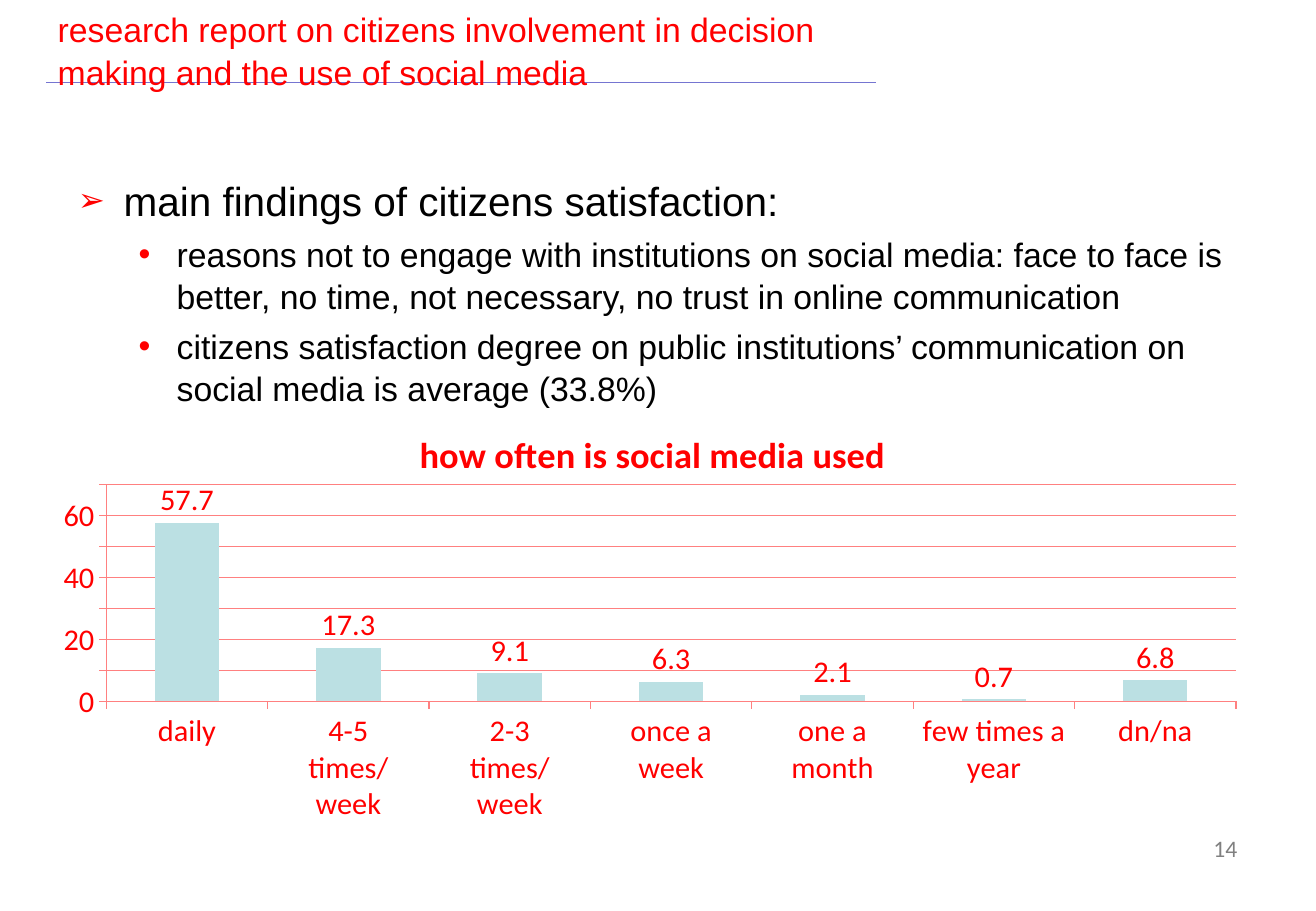
from dataclasses import dataclass

from lxml import etree
from pptx import Presentation
from pptx.chart.data import CategoryChartData
from pptx.dml.color import RGBColor
from pptx.enum.chart import XL_CHART_TYPE, XL_LABEL_POSITION, XL_TICK_MARK
from pptx.enum.shapes import MSO_CONNECTOR
from pptx.enum.text import MSO_ANCHOR, MSO_AUTO_SIZE, PP_ALIGN
from pptx.oxml import parse_xml
from pptx.oxml.ns import nsdecls, qn
from pptx.util import Pt

COLUMNS = XL_CHART_TYPE.COLUMN_CLUSTERED
ABOVE_BAR = XL_LABEL_POSITION.OUTSIDE_END
TICK_OUT = XL_TICK_MARK.OUTSIDE
STRAIGHT = MSO_CONNECTOR.STRAIGHT
MIDDLE, TOP = MSO_ANCHOR.MIDDLE, MSO_ANCHOR.TOP
NO_FIT = MSO_AUTO_SIZE.NONE
LEFT, RIGHT = PP_ALIGN.LEFT, PP_ALIGN.RIGHT

RED, BLACK, GREY = "FF0000", "000000", "808080"
RULE_BLUE, BAR_BLUE, AXIS_RED = "7575D1", "BBE0E3", "FF8080"
LINE_SPACING = 1.05


@dataclass
class Bullet:
    text: str
    level: int
    size: float
    symbol: str
    symbol_percent: int
    margin: float
    hanging: float


FINDINGS = [
    Bullet("main findings of citizens satisfaction:", 0, 24, "➢", 80, 27, 27),
    Bullet("reasons not to engage with institutions on social media: face to face is "
           "better, no time, not necessary, no trust in online communication",
           1, 20, "•", 100, 58.5, 22.5),
    Bullet("citizens satisfaction degree on public institutions’ communication on "
           "social media is average (33.8%)", 1, 20, "•", 100, 58.5, 22.5),
]
USAGE = {
    "daily": 57.7,
    "4-5 times/week": 17.3,
    "2-3 times/week": 9.1,
    "once a week": 6.3,
    "one a month": 2.1,
    "few times a year": 0.7,
    "dn/na": 6.8,
}


def color(value: str) -> RGBColor:
    return RGBColor.from_string(value)


def style_font(font, name: str, size: float, value: str, bold: bool = False) -> None:
    font.name, font.size, font.bold = name, Pt(size), bold
    font.color.rgb = color(value)


def style_line(line, value: str) -> None:
    line.color.rgb = color(value)
    line.width = Pt(0.75)


def place(box, left: float, top: float, width: float, height: float, anchor) -> None:
    box.left, box.top, box.width, box.height = Pt(left), Pt(top), Pt(width), Pt(height)
    frame = box.text_frame
    frame.word_wrap, frame.auto_size, frame.vertical_anchor = True, NO_FIT, anchor


def add_bullet(para, bullet: Bullet) -> None:
    para.text, para.level = bullet.text, bullet.level
    properties = para._p.get_or_add_pPr()
    properties.set("marL", str(Pt(bullet.margin)))
    properties.set("indent", str(-Pt(bullet.hanging)))
    symbol_color = etree.SubElement(properties, qn("a:buClr"))
    etree.SubElement(symbol_color, qn("a:srgbClr"), val=RED)
    etree.SubElement(properties, qn("a:buSzPct"), val=str(bullet.symbol_percent * 1000))
    etree.SubElement(properties, qn("a:buFont"), typeface="Arial")
    etree.SubElement(properties, qn("a:buChar"), char=bullet.symbol)
    para.alignment, para.line_spacing = LEFT, LINE_SPACING
    style_font(para.runs[0].font, "Arial", bullet.size, BLACK)


def add_usage_chart(page) -> None:
    data = CategoryChartData()
    data.categories = list(USAGE)
    data.add_series("Series 1", list(USAGE.values()))
    chart = page.shapes.add_chart(COLUMNS, Pt(27), Pt(242), Pt(720), Pt(241), data).chart
    style_font(chart.font, "Calibri", 18, RED)
    chart.has_legend = False

    title = chart.chart_title
    title.text_frame.text = "how often is social media used"
    style_font(title.text_frame.paragraphs[0].runs[0].font, "Calibri", 21.6, RED, True)
    title.include_in_layout = False

    values = chart.value_axis
    values.minimum_scale, values.maximum_scale, values.major_unit = 0, 70, 10
    values.has_major_gridlines = True
    style_line(values.major_gridlines.format.line, AXIS_RED)
    for axis in (values, chart.category_axis):
        axis.major_tick_mark = TICK_OUT
        style_line(axis.format.line, AXIS_RED)

    plot = chart.plots[0]
    plot.gap_width, plot.vary_by_categories = 150, False
    bars = plot.series[0].format
    bars.fill.solid()
    bars.fill.fore_color.rgb = color(BAR_BLUE)
    plot.has_data_labels = True
    labels = plot.data_labels
    labels.show_value, labels.position = True, ABOVE_BAR
    style_font(labels.font, "Calibri", 18, RED)

    # Fixed plot area, as shares of the chart
    area = chart._chartSpace.chart.plotArea
    for old in area.findall(qn("c:layout")):
        area.remove(old)
    area.insert(0, parse_xml(
        f'<c:layout {nsdecls("c")}><c:manualLayout><c:layoutTarget val="inner"/>'
        '<c:xMode val="edge"/><c:yMode val="edge"/><c:x val="0.05"/><c:y val="0.19"/>'
        '<c:w val="0.93"/><c:h val="0.54"/></c:manualLayout></c:layout>'))


def main() -> None:
    deck = Presentation()
    deck.slide_width, deck.slide_height = Pt(780), Pt(540)
    page = deck.slides.add_slide(deck.slide_layouts[1])

    # Rule behind the title
    rule = page.shapes.add_connector(STRAIGHT, Pt(519), Pt(49), Pt(27), Pt(49))
    style_line(rule.line, RULE_BLUE)
    etree.SubElement(rule._element.spPr, qn("a:effectLst"))
    page.shapes.element.insert(2, rule.element)

    # Title
    title = page.shapes.title
    place(title, 27, 9.4, 491, 39.6, MIDDLE)
    title.text_frame.text = ("research report on citizens involvement in decision "
                             "making and the use of social media")
    para = title.text_frame.paragraphs[0]
    para.alignment, para.line_spacing = LEFT, LINE_SPACING
    style_font(para.runs[0].font, "Arial", 20, RED)

    # Findings
    body = page.placeholders[1]
    place(body, 39, 99.4, 702, 388, TOP)
    frame = body.text_frame
    for index, bullet in enumerate(FINDINGS):
        para = frame.add_paragraph() if index else frame.paragraphs[0]
        add_bullet(para, bullet)
        para.space_before = Pt(0.2 * bullet.size if index else 0)

    # Page number
    number = page.shapes.add_textbox(0, 0, 0, 0)
    place(number, 685, 491, 55.5, 39.6, TOP)
    number.text_frame.text = "14"
    para = number.text_frame.paragraphs[0]
    para.alignment = RIGHT
    style_font(para.runs[0].font, "Calibri", 14, GREY)

    # Chart
    add_usage_chart(page)
    deck.save("out.pptx")


if __name__ == "__main__":
    main()
